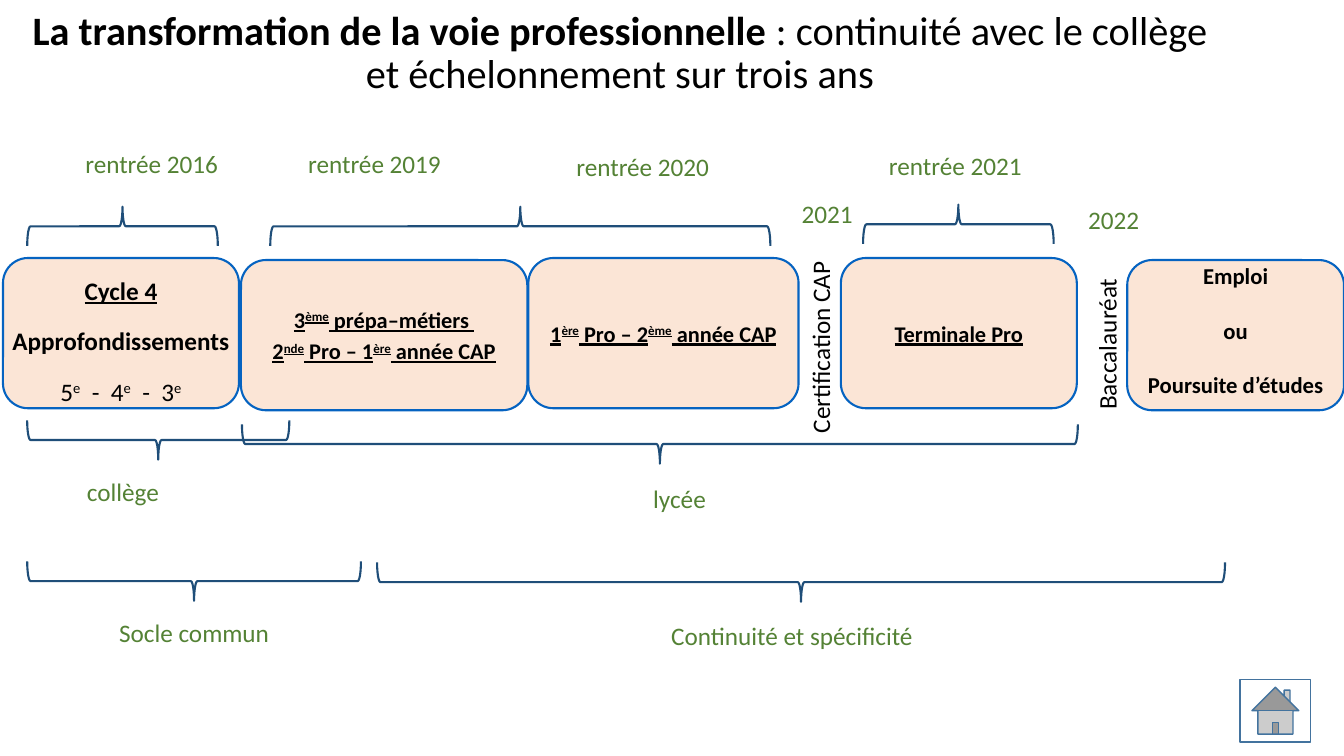
from lxml import etree
from pptx import Presentation
from pptx.dml.color import RGBColor
from pptx.enum import shapes, text
from pptx.oxml import ns
from pptx.util import Inches, Pt

COLORS = {"black": "000000", "white": "FFFFFF", "green": "548235", "peach": "FBE5D6",
          "box line": "0563C1", "brace": "1F4E79", "home line": "43739E"}

# Content: text between ^ marks is raised
TITLE = [("La transformation de la voie professionnelle ", True),
         (": continuité avec le collège et échelonnement sur trois ans", False)]

HEADING = {"size": Pt(16), "bold": True, "underline": True}
CYCLE = {"size": Pt(18), "bold": True, "underline": True}
OUTCOME = {"size": Pt(28), "bold": True}

# left, top, width, wrap, line spacing, paragraphs
STAGES = [
    (0.03, 2.56, 2.34, False, 1.5, [
        ("Cycle 4", CYCLE),
        ("Approfondissements", {**CYCLE, "underline": False}),
        ("5^e^  -  4^e^  -  3^e^", {"size": Pt(18)})]),
    (2.39, 2.58, 2.84, True, None, [
        ("3^ème^ prépa–métiers ", HEADING),
        ("2^nde^ Pro – 1^ère^ année CAP", HEADING)]),
    (5.24, 2.56, 2.68, False, None, [("1^ère^ Pro – 2^ème^ année CAP", HEADING)]),
    (8.34, 2.56, 2.34, False, None, [("Terminale Pro", HEADING)]),
    (11.18, 2.58, 2.15, False, None, [
        ("^Emploi^", OUTCOME), ("^ou^", OUTCOME), ("^Poursuite d’études^", OUTCOME)]),
]
STAGE_HEIGHT = 1.49

# left end, right end, top, rotation (90 points up, 270 points down)
BRACES = [
    (0.27, 2.16, 2.05, 90), (2.68, 7.64, 2.05, 90), (8.56, 10.45, 2.03, 90),
    (0.27, 2.87, 4.17, 270), (2.4, 10.69, 4.21, 270),
    (0.27, 3.58, 5.57, 270), (3.74, 12.15, 5.58, 270),
]
BRACE_DEPTH = 0.39

# text, left, top, width
LABELS = [
    ("rentrée 2016", 0.62, 1.42, 1.77), ("rentrée 2019", 2.83, 1.42, 1.77),
    ("rentrée 2020", 5.49, 1.45, 1.77), ("rentrée 2021", 8.59, 1.44, 1.77),
    ("2021", 7.32, 1.92, 1.77), ("2022", 10.16, 1.98, 1.77),
    ("collège", 0.67, 4.68, 1.1), ("lycée", 6.19, 4.75, 1.1),
    ("Socle commun", 0.98, 6.08, 1.89), ("Continuité et spécificité", 6.32, 6.11, 3.07),
]
DIPLOMAS = [("Certification CAP", 7.07, 3.13, 2.13), ("Baccalauréat", 10.14, 3.13, 1.67)]
LABEL_HEIGHT = 0.4


def rgb(name):
    return RGBColor.from_string(COLORS[name])


def add_run(paragraph, words, color, style):
    run = paragraph.add_run()
    run.text = words
    for attribute, value in {"name": "Calibri", **style}.items():
        setattr(run.font, attribute, value)
    run.font.color.rgb = rgb(color)
    return run


def add_outlined(kind, left, top, width, height, fill, line, weight):
    outlined = slide.shapes.add_shape(
        kind, Inches(left), Inches(top), Inches(width), Inches(height))
    outlined.shadow.inherit = False
    if fill:
        outlined.fill.solid()
        outlined.fill.fore_color.rgb = rgb(fill)
    else:
        outlined.fill.background()
    outlined.line.color.rgb = rgb(line)
    outlined.line.width = Pt(weight)
    return outlined


def add_label(words, left, top, width, color, align, rotation=0):
    label = slide.shapes.add_textbox(
        Inches(left), Inches(top), Inches(width), Inches(LABEL_HEIGHT))
    label.rotation = rotation
    label.text_frame.word_wrap = True
    paragraph = label.text_frame.paragraphs[0]
    paragraph.alignment = align
    add_run(paragraph, words, color, {"size": Pt(18)})


def fill_stage(frame, paragraphs, spacing):
    for number, (words, style) in enumerate(paragraphs):
        paragraph = frame.add_paragraph() if number else frame.paragraphs[0]
        paragraph.alignment = text.PP_ALIGN.CENTER
        paragraph.line_spacing = spacing
        after = etree.SubElement(paragraph._p.get_or_add_pPr(), ns.qn("a:spcAft"))
        etree.SubElement(after, ns.qn("a:spcPct"), val="20000")
        for part, piece in enumerate(words.split("^")):
            if piece:
                run = add_run(paragraph, piece, "black", style)
                if part % 2:
                    run._r.get_or_add_rPr().set("baseline", "30000")


deck = Presentation()
deck.slide_width, deck.slide_height = Inches(13.33), Inches(7.5)
slide = deck.slides.add_slide(deck.slide_layouts[5])

# Title
title = slide.shapes.title
for side, length in {"left": 0.15, "top": 0.11, "width": 12, "height": 0.85}.items():
    setattr(title, side, Inches(length))
title.text_frame.auto_size = text.MSO_AUTO_SIZE.NONE
title.text_frame.vertical_anchor = text.MSO_ANCHOR.MIDDLE
heading = title.text_frame.paragraphs[0]
heading.alignment = text.PP_ALIGN.CENTER
heading.line_spacing = 0.9
for words, bold in TITLE:
    add_run(heading, words, "black", {"size": Pt(28.8), "bold": bold})

# Home button
add_outlined(shapes.MSO_SHAPE.ACTION_BUTTON_HOME, 12.3, 6.74, 0.7, 0.62,
             "white", "home line", 1)

# Stages of the course
for left, top, width, wrap, spacing, paragraphs in STAGES:
    stage = add_outlined(shapes.MSO_SHAPE.ROUNDED_RECTANGLE, left, top, width,
                         STAGE_HEIGHT, "peach", "box line", 1.5)
    stage.text_frame.word_wrap = wrap
    stage.text_frame.vertical_anchor = text.MSO_ANCHOR.MIDDLE
    fill_stage(stage.text_frame, paragraphs, spacing)

# Braces: upright shapes turned about the middle of their span
for start, end, top, rotation in BRACES:
    span = end - start
    brace = add_outlined(shapes.MSO_SHAPE.LEFT_BRACE,
                         (start + end - BRACE_DEPTH) / 2, top + (BRACE_DEPTH - span) / 2,
                         BRACE_DEPTH, span, None, "brace", 1.5)
    brace.rotation = rotation

# Dates, periods and diplomas
for label in LABELS:
    add_label(*label, "green", text.PP_ALIGN.CENTER)
for diploma in DIPLOMAS:
    add_label(*diploma, "black", text.PP_ALIGN.LEFT, 270)

deck.save("out.pptx")
